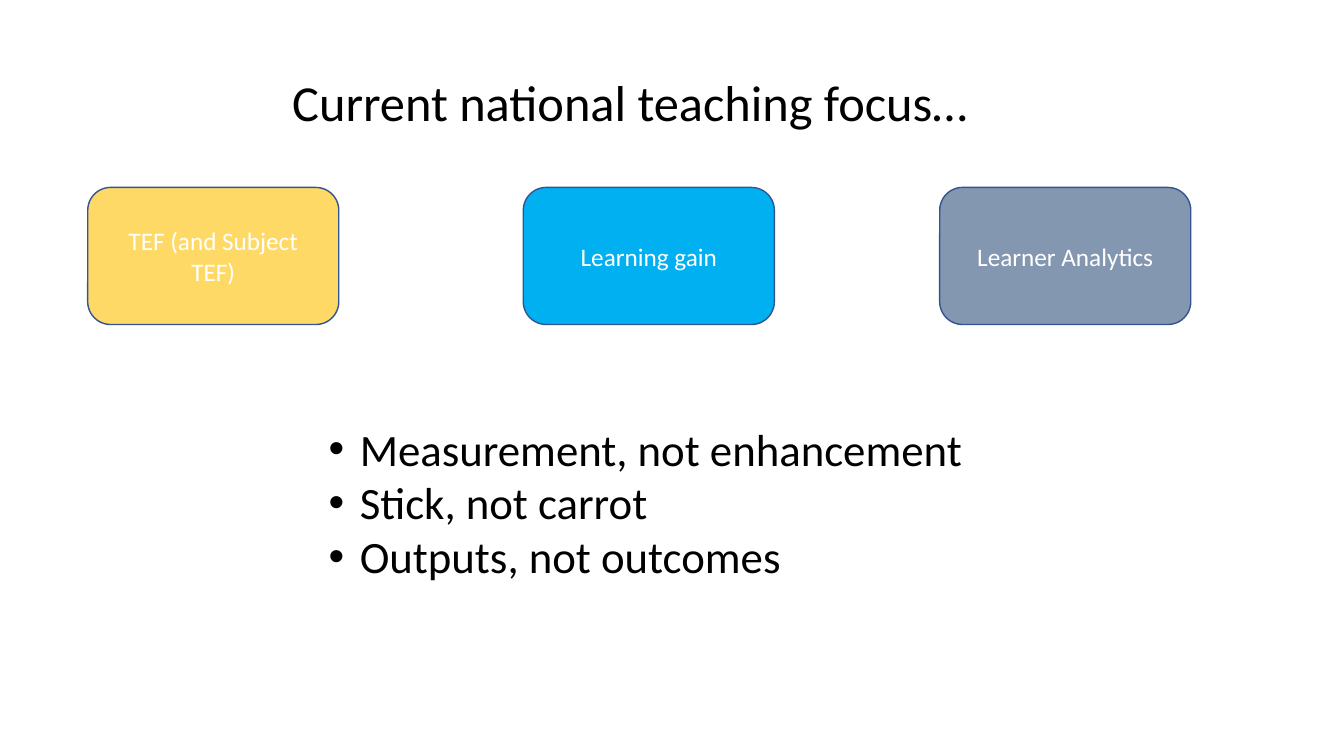
from typing import NamedTuple

from lxml import etree
from pptx import Presentation
from pptx.dml.color import RGBColor
from pptx.enum.shapes import MSO_SHAPE
from pptx.enum.text import MSO_ANCHOR, PP_ALIGN
from pptx.oxml.ns import qn
from pptx.slide import Slide
from pptx.text.text import TextFrame, _Paragraph
from pptx.util import Pt

PX = 9144  # EMU, 100 px to the inch
ROUND = MSO_SHAPE.ROUNDED_RECTANGLE
MIDDLE = MSO_ANCHOR.MIDDLE
LEFT, CENTER = PP_ALIGN.LEFT, PP_ALIGN.CENTER
FONT = "Calibri"
COLORS = {
    "gold": "FFD966",
    "sky": "00B0F0",
    "slate": "8497B0",
    "edge": "325491",
    "white": "FFFFFF",
    "black": "000000",
}
CARD_TOP, CARD_WIDTH, CARD_HEIGHT = 186, 249, 136
INDENT = 31


class Card(NamedTuple):
    left: int
    label: str
    fill: str


class Block(NamedTuple):
    left: int
    top: int
    width: int
    height: int
    size: int
    lines: list[str]
    bullet: bool


CARDS = [
    Card(87, "TEF (and Subject TEF)", "gold"),
    Card(519, "Learning gain", "sky"),
    Card(932, "Learner Analytics", "slate"),
]
BLOCKS = [
    Block(280, 66, 776, 71, 36, ["Current national teaching focus…"], False),
    Block(316, 413, 655, 172, 32,
          ["Measurement, not enhancement", "Stick, not carrot", "Outputs, not outcomes"], True),
]


def rgb(name: str) -> RGBColor:
    return RGBColor.from_string(COLORS[name])


def style(frame: TextFrame, size: int, color: str, align: PP_ALIGN) -> None:
    frame.word_wrap = True
    for para in frame.paragraphs:
        para.alignment = align
        for run in para.runs:
            run.font.name = FONT
            run.font.size = Pt(size)
            run.font.color.rgb = rgb(color)


def add_bullet(para: _Paragraph) -> None:
    props = para._p.get_or_add_pPr()
    props.set("marL", str(INDENT * PX))
    props.set("indent", str(-INDENT * PX))
    etree.SubElement(props, qn("a:buFont")).set("typeface", "Arial")
    etree.SubElement(props, qn("a:buChar")).set("char", "•")


def draw_card(slide: Slide, card: Card) -> None:
    shape = slide.shapes.add_shape(
        ROUND, card.left * PX, CARD_TOP * PX, CARD_WIDTH * PX, CARD_HEIGHT * PX)
    shape.shadow.inherit = False
    shape.fill.solid()
    shape.fill.fore_color.rgb = rgb(card.fill)
    shape.line.color.rgb = rgb("edge")
    shape.line.width = Pt(1)
    frame = shape.text_frame
    frame.text = card.label
    frame.vertical_anchor = MIDDLE
    style(frame, 18, "white", CENTER)


def draw_block(slide: Slide, block: Block) -> None:
    box = slide.shapes.add_textbox(
        block.left * PX, block.top * PX, block.width * PX, block.height * PX)
    frame = box.text_frame
    frame.text = "\n".join(block.lines)
    style(frame, block.size, "black", LEFT)
    if block.bullet:
        for para in frame.paragraphs:
            add_bullet(para)


def main() -> None:
    deck = Presentation()
    deck.slide_width, deck.slide_height = 1333 * PX, 750 * PX
    slide = deck.slides.add_slide(deck.slide_layouts[6])
    for card in CARDS:
        draw_card(slide, card)
    for block in BLOCKS:
        draw_block(slide, block)
    deck.save("out.pptx")


if __name__ == "__main__":
    main()
